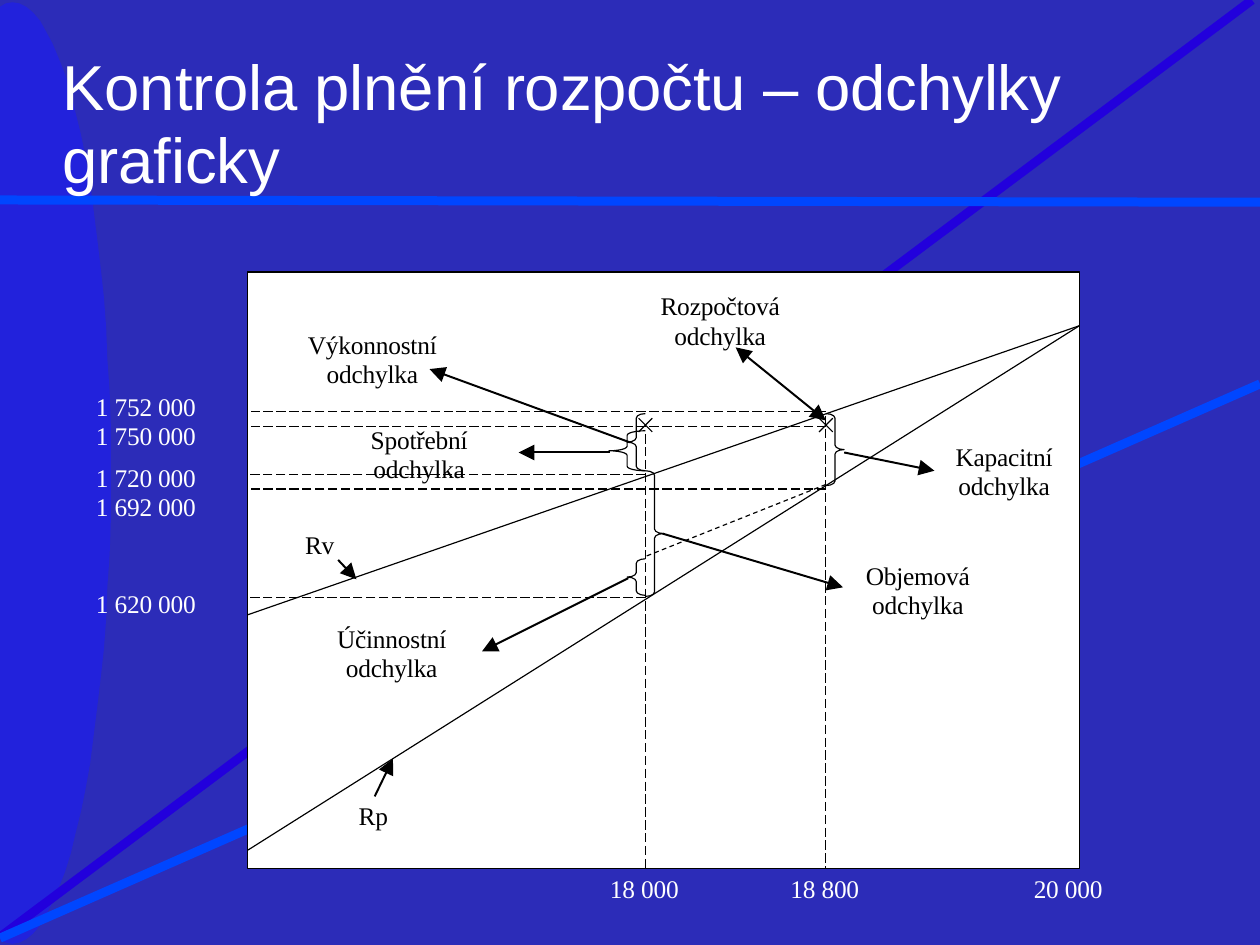
import math
from dataclasses import dataclass

from lxml import etree
from pptx import Presentation
from pptx import util as u
from pptx.dml.color import RGBColor
from pptx.enum import dml, shapes, text
from pptx.oxml.ns import qn

PX = 9144
WHITE, BLACK, BACKGROUND = "FFFFFF", "000000", "2C2CB8"
ELLIPSE, DIAGONAL, BRIGHT = "2222DC", "2200DC", "0046FF"
LONG_DASH, DASH = dml.MSO_LINE.LONG_DASH, dml.MSO_LINE.DASH
LEFT_BRACE, RIGHT_BRACE = shapes.MSO_SHAPE.LEFT_BRACE, shapes.MSO_SHAPE.RIGHT_BRACE
CENTER, LEFT = text.PP_ALIGN.CENTER, text.PP_ALIGN.LEFT
FRAME_LEFT, FRAME_TOP, FRAME_RIGHT, FRAME_BOTTOM = 217, 238, 945, 760
ACTUAL_X, PLANNED_X, MARK_Y = 565, 723, 372


@dataclass
class Line:
    x1: int
    y1: int
    x2: int
    y2: int
    color: str = BLACK
    width: float = 0.75
    dash: dml.MSO_LINE | None = None
    heads: tuple[str, ...] = ()


@dataclass
class Brace:
    kind: shapes.MSO_SHAPE
    left: int
    top: int
    width: int
    height: int


@dataclass
class Label:
    lines: tuple[str, ...]
    left: int
    top: int
    width: int
    align: text.PP_ALIGN = LEFT
    color: str = BLACK
    size: int = 16
    font: str = "Times New Roman"
    spacing: float = 18.5
    gap_line: int = -1


def arrow(x1: int, y1: int, x2: int, y2: int, heads: tuple[str, ...] = ("tailEnd",)) -> Line:
    return Line(x1, y1, x2, y2, width=1.25, heads=heads)


DECORATION = [
    Line(1096, 0, 0, 820, DIAGONAL, 5.67),
    Line(1103, 177, 0, 175, BRIGHT, 5.67),
    Line(1103, 336, 0, 821, BRIGHT, 5.67),
]
LEVELS = [(360, PLANNED_X), (373, PLANNED_X), (428, PLANNED_X), (415, ACTUAL_X), (523, ACTUAL_X)]
GRAPH_LINES = [
    Line(FRAME_RIGHT, 285, FRAME_LEFT, 538),
    Line(FRAME_LEFT, 744, FRAME_RIGHT, 285),
    Line(PLANNED_X, 364, PLANNED_X, FRAME_BOTTOM, dash=LONG_DASH),
    Line(ACTUAL_X, 380, ACTUAL_X, FRAME_BOTTOM, dash=LONG_DASH),
    *(Line(right, y, FRAME_LEFT, y, dash=LONG_DASH) for y, right in LEVELS),
    Line(PLANNED_X, 424, ACTUAL_X, 487, dash=DASH),
]
ARROWS = [
    arrow(644, 304, 723, 368, ("headEnd", "tailEnd")),
    arrow(739, 396, 818, 412),
    arrow(580, 467, 738, 514),
    arrow(550, 506, 422, 570),
    arrow(551, 387, 376, 323),
    arrow(328, 697, 344, 664),
    arrow(296, 490, 312, 507),
    arrow(534, 396, 454, 396),
]
BRACES = [
    Brace(RIGHT_BRACE, 723, 362, 16, 63),
    Brace(LEFT_BRACE, 549, 489, 16, 32),
    Brace(RIGHT_BRACE, 565, 412, 16, 110),
    Brace(LEFT_BRACE, 549, 362, 16, 50),
    Brace(LEFT_BRACE, 533, 377, 32, 35),
]
DEVIATIONS = [
    ("Rozpočtová", 576, 255, 109),
    ("Kapacitní", 835, 387, 88),
    ("Objemová", 756, 491, 95),
    ("Účinnostní", 293, 546, 100),
    ("Výkonnostní", 267, 289, 118),
    ("Spotřební", 323, 372, 88),
]
LABELS = [
    Label(("Kontrola plnění rozpočtu – odchylky", "graficky"), 55, 43, 994,
          color=WHITE, size=40, font="Arial", spacing=46.4),
    Label(("1 752 000", "1 750 000", "1 720 000", "1 692 000"), 84, 343, 90,
          color=WHITE, gap_line=2),
    Label(("1 620 000",), 84, 516, 90, color=WHITE),
    *(Label((name, "odchylka"), left, top, width, CENTER)
      for name, left, top, width in DEVIATIONS),
    *(Label((volume,), left, 765, 64, color=WHITE)
      for volume, left in (("18 000", 534), ("18 800", 692), ("20 000", 905))),
    Label(("Rp",), 314, 701, 29),
    Label(("Rv",), 267, 464, 29),
]


def rgb(color: str) -> RGBColor:
    return RGBColor.from_string(color)


def set_values(target, values: dict) -> None:
    for name, value in values.items():
        setattr(target, name, value)


def paint(shape, fill: str | None, outline: str | None) -> None:
    shape.shadow.inherit = False
    for part, color in ((shape.fill, fill), (shape.line.fill, outline)):
        if color is None:
            part.background()
        else:
            part.solid()
            part.fore_color.rgb = rgb(color)
    shape.line.width = u.Pt(0.75)


def draw_line(slide, line: Line) -> None:
    connector = slide.shapes.add_connector(
        shapes.MSO_CONNECTOR.STRAIGHT, *(PX * v for v in (line.x1, line.y1, line.x2, line.y2)))
    connector.line.color.rgb = rgb(line.color)
    connector.line.width = u.Pt(line.width)
    if line.dash is not None:
        connector.line.dash_style = line.dash
    properties = connector._element.spPr
    for head in line.heads:
        etree.SubElement(properties.get_or_add_ln(), qn(f"a:{head}"),
                         type="triangle", w="lg", len="lg")
    etree.SubElement(properties, qn("a:effectLst"))


def draw_brace(slide, brace: Brace) -> None:
    shape = slide.shapes.add_shape(
        brace.kind, *(PX * v for v in (brace.left, brace.top, brace.width, brace.height)))
    shape.adjustments[0] = 4 / brace.width
    paint(shape, None, BLACK)


def draw_ellipse(slide) -> None:
    angles = [math.radians(degree) for degree in range(-98, 99, 4)]
    points = [(max(0, round(11 + 86 * math.cos(a))), round(414 + 412 * math.sin(a)))
              for a in angles]
    builder = slide.shapes.build_freeform(*points[0], scale=PX)
    builder.add_line_segments(points[1:], close=True)
    paint(builder.convert_to_shape(), ELLIPSE, None)


def draw_mark(slide, x: int, y: int, reach: int = 6) -> None:
    builder = slide.shapes.build_freeform(x - reach, y - reach, scale=PX)
    builder.add_line_segments([(x + reach, y + reach)], close=False)
    builder.move_to(x + reach, y - reach)
    builder.add_line_segments([(x - reach, y + reach)], close=False)
    paint(builder.convert_to_shape(), None, BLACK)


def draw_label(slide, label: Label) -> None:
    height = round(label.spacing * len(label.lines) * u.Pt(1) / PX)
    box = slide.shapes.add_textbox(
        *(PX * v for v in (label.left, label.top, label.width, height)))
    set_values(box.text_frame, {
        "word_wrap": True, "margin_left": 0, "margin_right": 0,
        "margin_top": 0, "margin_bottom": 0})
    for index, line in enumerate(label.lines):
        paragraph = box.text_frame.paragraphs[0] if index == 0 else box.text_frame.add_paragraph()
        set_values(paragraph, {
            "alignment": label.align, "line_spacing": u.Pt(label.spacing),
            "space_before": u.Pt(8 if index == label.gap_line else 0)})
        run = paragraph.add_run()
        run.text = line
        set_values(run.font, {"name": label.font, "size": u.Pt(label.size)})
        run.font.color.rgb = rgb(label.color)
        run._r.get_or_add_rPr().set("spc", "-10")


def main() -> None:
    presentation = Presentation()
    set_values(presentation, {"slide_width": 1103 * PX, "slide_height": 827 * PX})
    slide = presentation.slides.add_slide(presentation.slide_layouts[6])
    slide.background.fill.solid()
    slide.background.fill.fore_color.rgb = rgb(BACKGROUND)
    draw_ellipse(slide)
    for line in DECORATION:
        draw_line(slide, line)
    frame = slide.shapes.add_shape(
        shapes.MSO_SHAPE.RECTANGLE, FRAME_LEFT * PX, FRAME_TOP * PX,
        (FRAME_RIGHT - FRAME_LEFT) * PX, (FRAME_BOTTOM - FRAME_TOP) * PX)
    paint(frame, WHITE, BLACK)
    for line in GRAPH_LINES + ARROWS:
        draw_line(slide, line)
    for x in (ACTUAL_X, PLANNED_X):
        draw_mark(slide, x, MARK_Y)
    for brace in BRACES:
        draw_brace(slide, brace)
    for label in LABELS:
        draw_label(slide, label)
    presentation.save("out.pptx")


if __name__ == "__main__":
    main()
